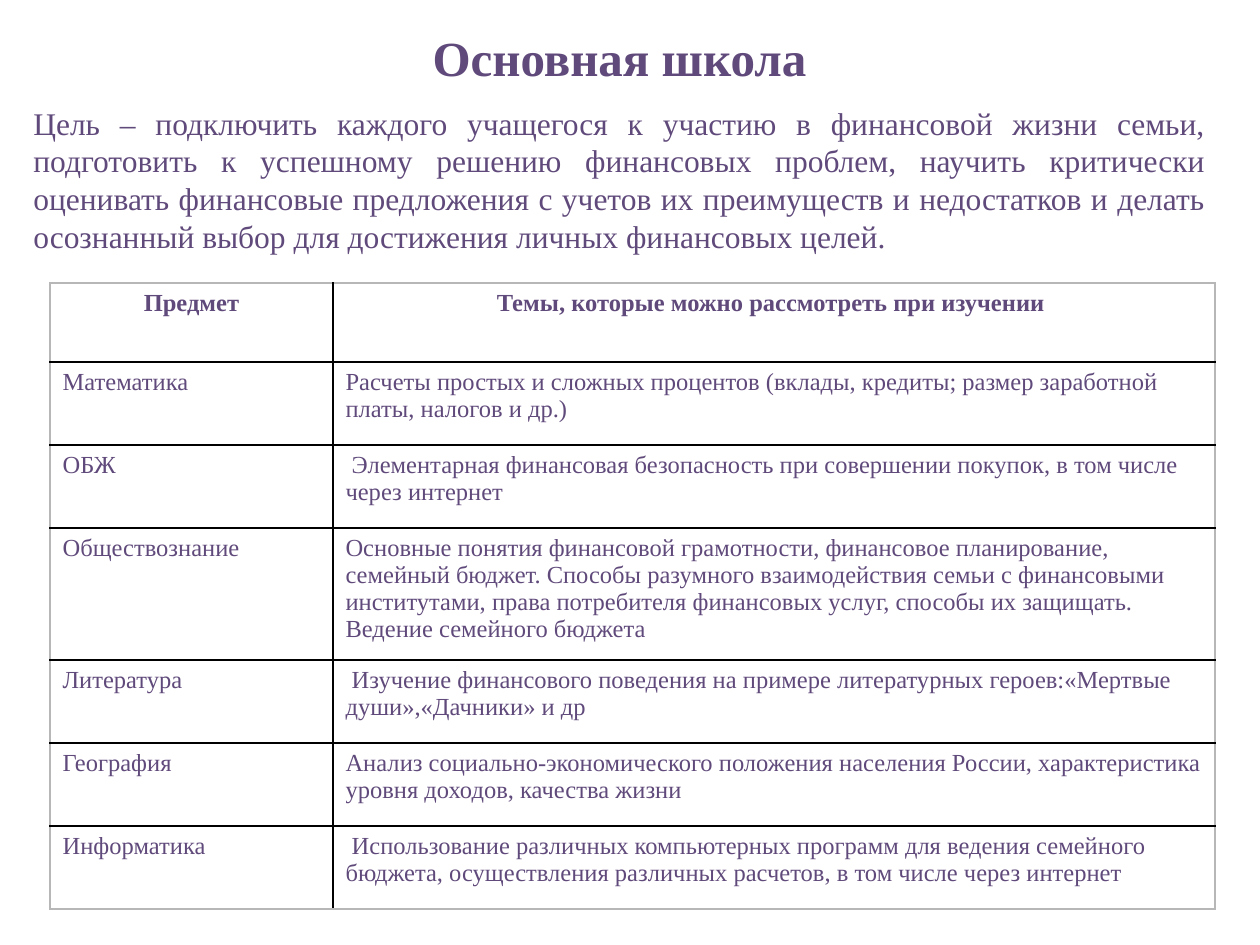
from dataclasses import dataclass

from lxml.etree import SubElement
from pptx import Presentation
from pptx.dml.color import RGBColor
from pptx.enum.text import MSO_AUTO_SIZE, PP_ALIGN
from pptx.oxml.ns import qn
from pptx.util import Emu, Pt

FONT = "Times New Roman"
PURPLE, BLACK, GREY, WHITE = "604A7B", "000000", "B7B7B7", "FFFFFF"
COLUMN_WIDTHS = (283, 882)


@dataclass
class Row:
    subject: str
    topics: str
    height: int = 83


HEADER = Row("Предмет", "Темы, которые можно рассмотреть при изучении ", 79)
SUBJECTS = [
    Row("Математика", "Расчеты простых и сложных процентов (вклады, кредиты; "
        "размер заработной платы, налогов и др.)"),
    Row("ОБЖ", " Элементарная финансовая безопасность при совершении покупок, "
        "в том числе через интернет"),
    Row("Обществознание", "Основные понятия финансовой грамотности, финансовое "
        "планирование, семейный бюджет. Способы разумного взаимодействия семьи "
        "с финансовыми институтами, права потребителя финансовых услуг, способы "
        "их защищать. Ведение семейного бюджета", 132),
    Row("Литература", " Изучение финансового поведения на примере литературных "
        "героев:«Мертвые души»,«Дачники» и др"),
    Row("География", "Анализ социально-экономического положения населения России, "
        "характеристика уровня доходов, качества жизни"),
    Row("Информатика", " Использование различных компьютерных программ для ведения "
        "семейного бюджета, осуществления различных расчетов, в том числе через "
        "интернет"),
]
GOAL = ("Цель – подключить каждого учащегося к участию в финансовой жизни семьи, "
        "подготовить к успешному решению финансовых проблем, научить критически "
        "оценивать финансовые предложения с учетов их преимуществ и недостатков "
        "и делать осознанный выбор для достижения личных финансовых целей.")


def px(length: int) -> Emu:
    return Emu(round(length * 914400 / 126))


def color(value: str) -> RGBColor:
    return RGBColor.from_string(value)


def write(para, text: str, size: int, bold: bool, align) -> None:
    para.text = text
    para.alignment = align
    para.font.name = FONT
    para.font.size = Pt(size)
    para.font.bold = bold
    para.font.color.rgb = color(PURPLE)


def add_border(cell, side: str, value: str) -> None:
    line = SubElement(cell._tc.get_or_add_tcPr(), qn(f"a:ln{side}"), w=str(Pt(1)))
    fill = SubElement(line, qn("a:solidFill"))
    SubElement(fill, qn("a:srgbClr"), val=value)


def add_intro(page) -> None:
    box = page.shapes.add_textbox(px(21), px(21), px(1197), px(244))
    frame = box.text_frame
    frame.word_wrap = True
    frame.auto_size = MSO_AUTO_SIZE.SHAPE_TO_FIT_TEXT
    write(frame.paragraphs[0], "Основная школа", 28, True, PP_ALIGN.CENTER)
    goal = frame.add_paragraph()
    write(goal, GOAL, 18, False, PP_ALIGN.JUSTIFY)
    goal.space_before = Pt(10)


def add_subject_table(page, rows: list[Row]) -> None:
    height = sum(row.height for row in rows)
    table = page.shapes.add_table(len(rows), len(COLUMN_WIDTHS), px(50), px(283),
                                  px(sum(COLUMN_WIDTHS)), px(height)).table
    table.first_row = table.horz_banding = False
    for column, width in zip(table.columns, COLUMN_WIDTHS):
        column.width = px(width)

    last_row, last_column = len(rows) - 1, len(COLUMN_WIDTHS) - 1
    for r, row in enumerate(rows):
        table.rows[r].height = px(row.height)
        is_header = r == 0
        align = PP_ALIGN.CENTER if is_header else PP_ALIGN.LEFT
        for c, text in enumerate((row.subject, row.topics)):
            cell = table.cell(r, c)
            write(cell.text_frame.paragraphs[0], text, 14, is_header, align)
            # Black rules inside, a grey frame outside
            outer = {"L": c == 0, "R": c == last_column,
                     "T": r == 0, "B": r == last_row}
            for side, is_outer in outer.items():
                add_border(cell, side, GREY if is_outer else BLACK)
            cell.fill.solid()
            cell.fill.fore_color.rgb = color(WHITE)


def main() -> None:
    deck = Presentation()
    deck.slide_width, deck.slide_height = px(1260), px(945)
    page = deck.slides.add_slide(deck.slide_layouts[6])
    # Subjects and their topics
    add_subject_table(page, [HEADER, *SUBJECTS])
    # Title and goal
    add_intro(page)
    deck.save("out.pptx")


if __name__ == "__main__":
    main()
